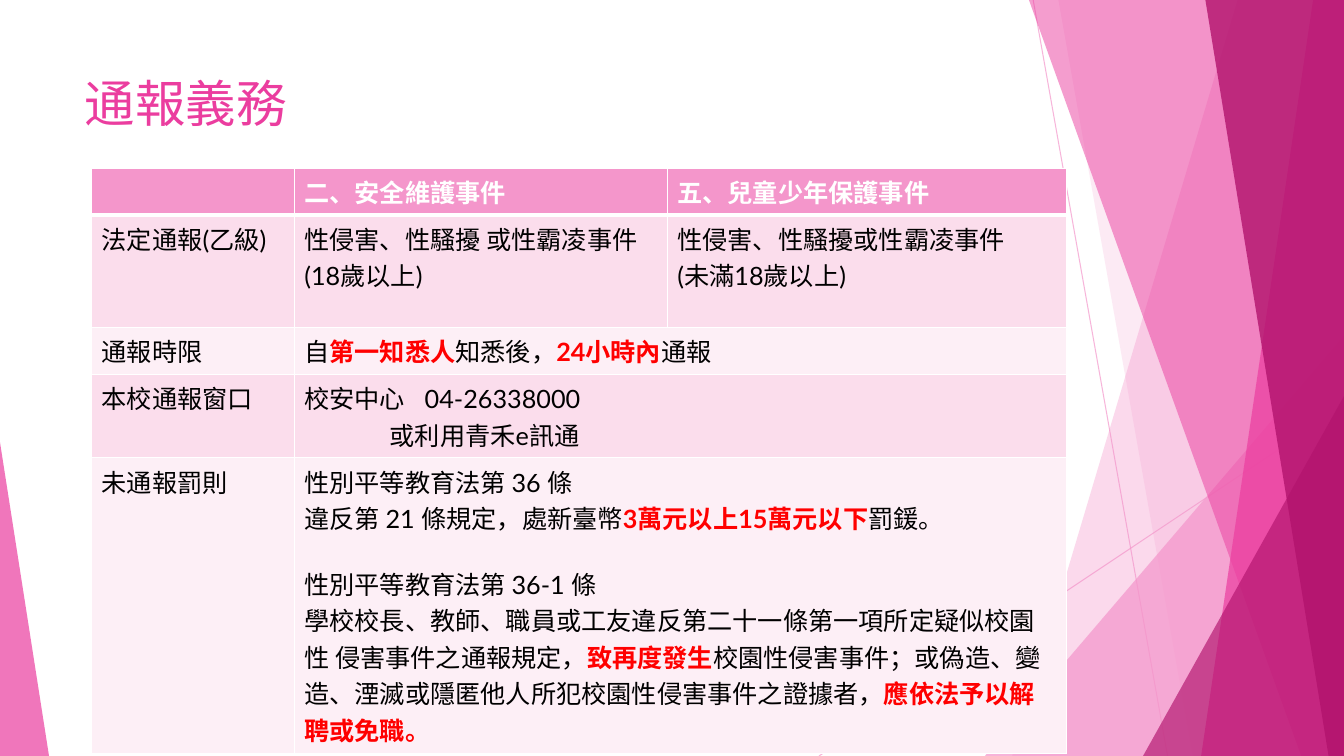
from lxml.etree import SubElement
from pptx import Presentation
from pptx.dml.color import RGBColor as RGB
from pptx.enum.shapes import MSO_CONNECTOR as CONN, MSO_SHAPE as SHAPE
from pptx.enum.text import MSO_ANCHOR as ANCHOR
from pptx.oxml.ns import qn
from pptx.util import Pt

THEME = {
    "font": "Lato", "title": 36, "body": 18,
    "light": "F496CB", "mid": "EB3D9F", "dark": "B2136D",
    "white": "FFFFFF", "black": "000000", "alert": "FF0000",
    "bands": ("FBDDEC", "FDEFF6"),
}
W, H = 960, 540

TITLE = "通報義務"
COLS = (144.7, 266.4, 285.1)
ROWS = (33, 80.5, 33.5, 59.5, 211)
TABLE_AT = (65.5, 120.5)
ALERT = True
CELLS = [
    [[], [{"runs": ["二、安全維護事件"]}], [{"runs": ["五、兒童少年保護事件"]}]],
    [[{"runs": ["法定通報(乙級)"]}],
     [{"runs": ["性侵害、性騷擾 或性霸凌事件"]}, {"runs": ["(18歲以上)"]}],
     [{"runs": ["性侵害、性騷擾或性霸凌事件"]}, {"runs": ["(未滿18歲以上)"]}]],
    [[{"runs": ["通報時限"]}],
     [{"runs": ["自", ("第一知悉人", ALERT), "知悉後，", ("24小時內", ALERT), "通報"]}]],
    [[{"runs": ["本校通報窗口"]}],
     [{"runs": ["校安中心\t04-26338000"], "tab": 86},
      {"runs": ["或利用青禾e訊通"], "indent": 61}]],
    [[{"runs": ["未通報罰則"]}],
     [{"runs": ["性別平等教育法第 36 條"]},
      {"runs": ["違反第 21 條規定，處新臺幣", ("3萬元以上15萬元以下", ALERT), "罰鍰。"]},
      {"runs": ["性別平等教育法第 36-1 條"], "before": 21},
      {"runs": ["學校校長、教師、職員或工友違反第二十一條第一項所定疑似校園性 侵害事件之通報規定，",
                ("致再度發生", ALERT),
                "校園性侵害事件；或偽造、變造、湮滅或隱匿他人所犯校園性侵害事件之證據者，",
                ("應依法予以解聘或免職。", ALERT)]}]],
]

LINES = [((738, 0), (834, H)), ((W, 290), (585, H))]
FACETS = [
    ("band", (884, 723), "light", 36),
    ("band", (756, 852), "light", 20),
    ("triangle", (703.5, 240, 256.5, 300), 1, "light", 72),
    ("band", (735, 929.5), "mid", 50),
    ("band", (938, 858), "mid", 70),
    ("band", (861, 949), "dark", 80),
    ("triangle", (816.5, 283, 143.5, 257), 1, "dark", 66),
    ("triangle", (0, 316, 35, 224), 0, "mid", 70),
]


def color(name):
    return RGB.from_string(THEME.get(name, name))


def set_alpha(fill_parent, percent):
    clr = next(fill_parent.iter(qn("a:srgbClr")))
    SubElement(clr, qn("a:alpha"), val=str(percent * 1000))


def add_run(p, text, size, clr, bold=False):
    r = p.add_run()
    r.text = text
    r.font.name, r.font.size, r.font.bold = THEME["font"], Pt(size), bold
    r.font.color.rgb = color(clr)


def add_line(s, start, end):
    c = s.shapes.add_connector(CONN.STRAIGHT, *map(Pt, start + end))
    c.line.width = Pt(0.75)
    c.line.color.rgb = color("light")
    set_alpha(c.line._get_or_add_ln(), 70)
    SubElement(c._element.spPr, qn("a:effectLst"))


def add_facet(s, kind, place, *style):
    if kind == "band":
        top, bottom = place
        fb = s.shapes.build_freeform(Pt(top), 0)
        fb.add_line_segments([(Pt(x), Pt(y)) for x, y in ((W, 0), (W, H), (bottom, H))])
        sp = fb.convert_to_shape()
    else:
        sp = s.shapes.add_shape(SHAPE.ISOSCELES_TRIANGLE, *map(Pt, place))
        sp.adjustments[0] = style[0]
    clr, alpha = style[-2:]
    sp.shadow.inherit = False
    sp.fill.solid()
    sp.fill.fore_color.rgb = color(clr)
    set_alpha(sp._element.spPr, alpha)
    sp.line.fill.background()


def set_borders(cell, bottom, top):
    tc_pr = cell._tc.get_or_add_tcPr()
    for side, width in (("L", 1), ("R", 1), ("T", top), ("B", bottom)):
        ln = SubElement(tc_pr, qn("a:ln" + side), w=str(Pt(width)))
        SubElement(SubElement(ln, qn("a:solidFill")), qn("a:srgbClr"), val=THEME["white"])


def fill_cell(cell, paragraphs, row):
    header = row == 0
    set_borders(cell, 3 if header else 1, 3 if row == 1 else 1)
    cell.fill.solid()
    cell.fill.fore_color.rgb = color("light" if header else THEME["bands"][(row - 1) % 2])
    tf = cell.text_frame
    for i, para in enumerate(paragraphs):
        p = tf.add_paragraph() if i else tf.paragraphs[0]
        if "before" in para:
            p.space_before = Pt(para["before"])
        p_pr = p._p.get_or_add_pPr()
        if "indent" in para:
            p_pr.set("marL", str(Pt(para["indent"])))
        if "tab" in para:
            tabs = SubElement(p_pr, qn("a:tabLst"))
            SubElement(tabs, qn("a:tab"), pos=str(Pt(para["tab"])), algn="l")
        for run in para["runs"]:
            text, alert = (run, False) if isinstance(run, str) else run
            clr = "alert" if alert else "white" if header else "black"
            add_run(p, text, THEME["body"], clr, header or alert)


def add_report_table(s):
    frame = s.shapes.add_table(len(ROWS), len(COLS), *map(Pt, TABLE_AT + (sum(COLS), sum(ROWS))))
    table = frame.table
    for col, width in zip(table.columns, COLS):
        col.width = Pt(width)
    for r, (height, cells) in enumerate(zip(ROWS, CELLS)):
        table.rows[r].height = Pt(height)
        if len(cells) < len(COLS):
            table.cell(r, len(cells) - 1).merge(table.cell(r, len(COLS) - 1))
        for c, paragraphs in enumerate(cells):
            fill_cell(table.cell(r, c), paragraphs, r)


def main():
    prs = Presentation()
    prs.slide_width, prs.slide_height = Pt(W), Pt(H)
    s = prs.slides.add_slide(prs.slide_layouts[6])
    for start, end in LINES:
        add_line(s, start, end)
    for facet in FACETS:
        add_facet(s, *facet)
    tf = s.shapes.add_textbox(Pt(53.5), Pt(48), Pt(677), Pt(104)).text_frame
    tf.word_wrap = True
    tf.vertical_anchor = ANCHOR.TOP
    add_run(tf.paragraphs[0], TITLE, THEME["title"], "mid")
    add_report_table(s)
    prs.save("out.pptx")


if __name__ == "__main__":
    main()
